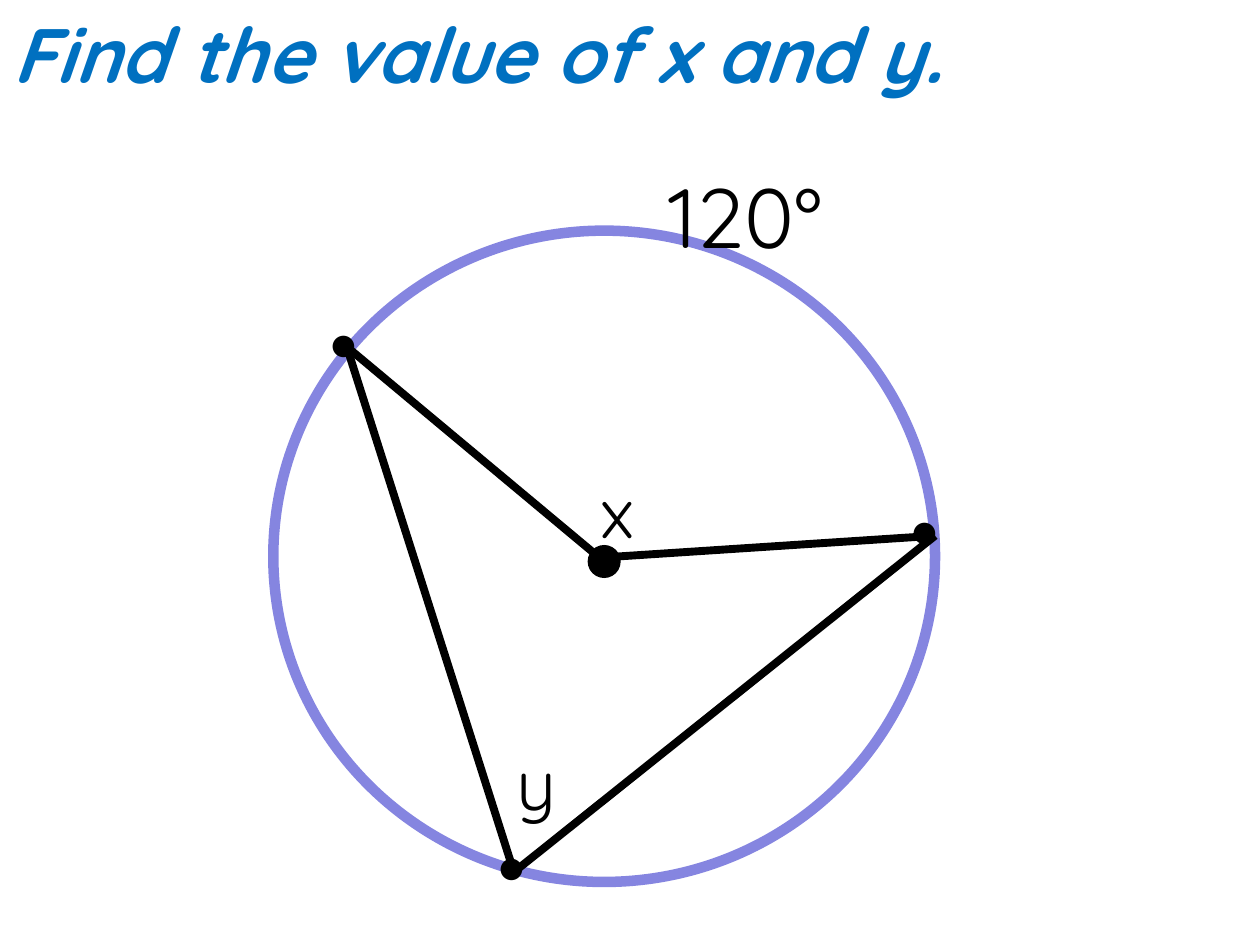
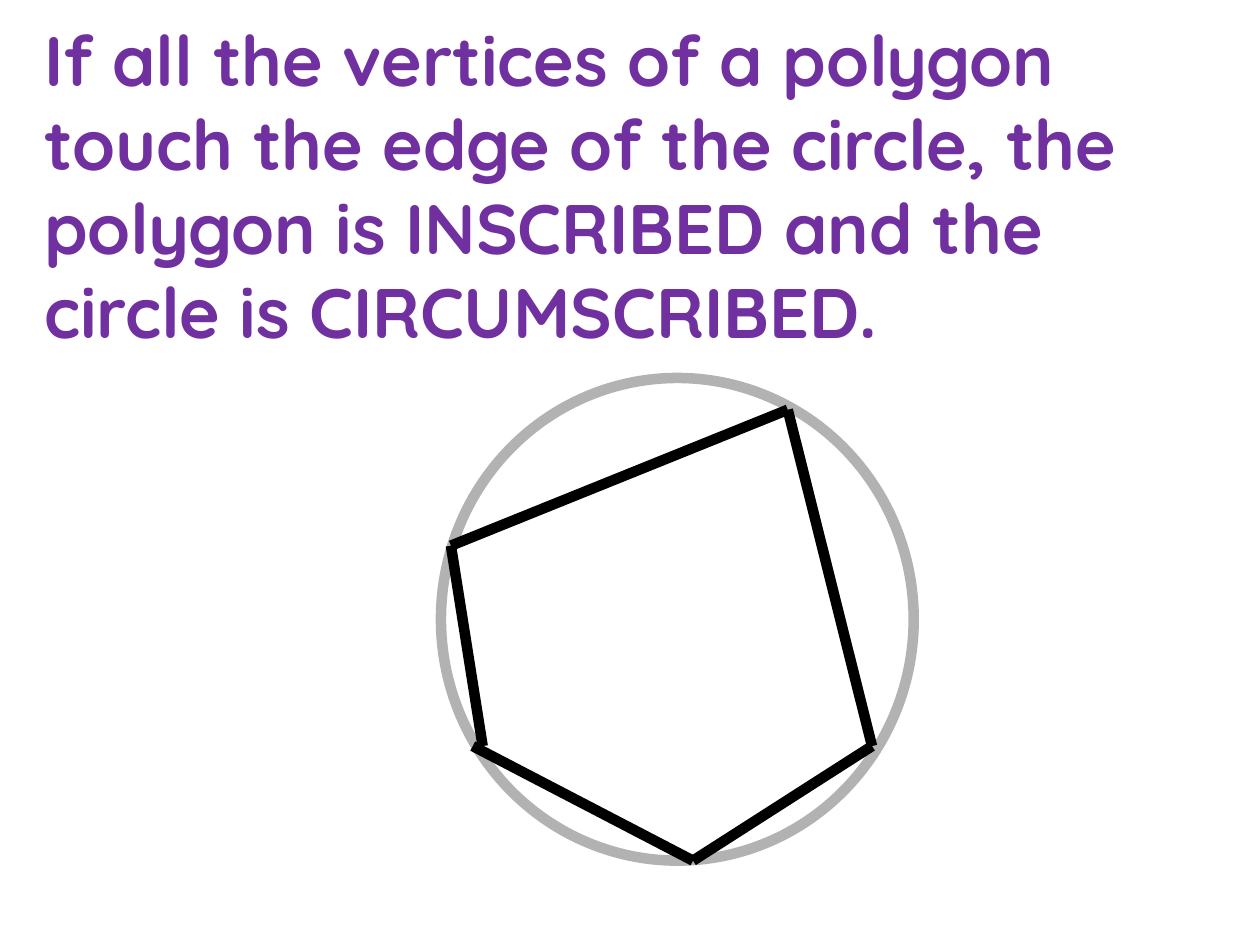
from lxml import etree
from pptx import Presentation
from pptx import util as u
from pptx.dml.color import RGBColor
from pptx.enum import shapes, text
from pptx.oxml.ns import qn

FONT = "Quicksand"
BLACK, WHITE = "000000", "FFFFFF"

# Content: lengths in cm, type and line sizes in points
A, B, C = (6.99, 6.99), (18.85, 10.8), (10.36, 17.58)
LEFT, TOP, RIGHT = (9.09, 11), (15.88, 8.26), (17.58, 15.04)
BASE = (13.97, 17.35)

SLIDES = [
    dict(
        title="Find the value of x and y.",
        box=(0, 0, 21.79, 2.13), size=44, color="0070C0", slant=True,
        rings=[((5.51, 4.65, 13.34, 13.13), None, "8585E0", 6),
               ((11.86, 11, 0.64, 0.64), BLACK, BLACK, 0.75)],
        lines=[((12.27, 11.23), B), ((12.07, 11.23), A), (A, C), (C, B)],
        width=4.5,
        labels=[("120°", (13.23, 3.2, 6.78, 2.31), 48),
                ("x", (11.86, 9.32, 2.97, 1.96), 40),
                ("y", (10.16, 14.81, 2.97, 1.96), 40)]
        + [("•", (x, y, 1.3, 2.31), 48)
           for x, y in [(6.4, 5.77), (18.11, 9.55), (9.78, 16.31)]],
    ),
    dict(
        title="If all the vertices of a polygon touch the edge of the circle, "
              "the polygon is INSCRIBED and the circle is CIRCUMSCRIBED.",
        box=(0.64, 0.2, 23.93, 7.09), size=40, color="7030A0", slant=False,
        rings=[((8.89, 7.62, 9.53, 9.73), WHITE, "B2B2B2", 6)],
        lines=[(LEFT, TOP), (TOP, RIGHT), (LEFT, (9.73, 15.04)),
               ((9.53, 15.04), BASE), (BASE, RIGHT)],
        width=6,
        labels=[],
    ),
]


def rgb(code):
    return RGBColor.from_string(code)


def cm(nums):
    return [u.Cm(n) for n in nums]


def style(frame, words, size, color, bold=False, slant=False):
    frame.text = words
    frame.word_wrap = True
    frame.auto_size = text.MSO_AUTO_SIZE.NONE
    frame.vertical_anchor = text.MSO_ANCHOR.TOP
    para = frame.paragraphs[0]
    para.alignment = text.PP_ALIGN.LEFT
    font = para.runs[0].font
    font.name, font.size = FONT, u.Pt(size)
    font.bold, font.italic = bold, slant
    font.color.rgb = rgb(color)


def stroke(line, color, width):
    line.color.rgb = rgb(color)
    line.width = u.Pt(width)


def ring(slide, box, fill, color, width):
    oval = slide.shapes.add_shape(shapes.MSO_SHAPE.OVAL, *cm(box))
    oval.shadow.inherit = False
    if fill:
        oval.fill.solid()
        oval.fill.fore_color.rgb = rgb(fill)
    else:
        oval.fill.background()
    stroke(oval.line, color, width)


def chord(slide, start, end, width):
    line = slide.shapes.add_connector(
        shapes.MSO_CONNECTOR.STRAIGHT, *cm(start + end))
    stroke(line.line, BLACK, width)
    etree.SubElement(line._element.spPr, qn("a:effectLst"))


def build(deck, item):
    slide = deck.slides.add_slide(deck.slide_layouts[5])

    # Title
    head = slide.shapes.title
    head.left, head.top, head.width, head.height = cm(item["box"])
    style(head.text_frame, item["title"], item["size"], item["color"],
          bold=True, slant=item["slant"])

    # Circles, then the sides, then the labels
    for args in item["rings"]:
        ring(slide, *args)
    for start, end in item["lines"]:
        chord(slide, start, end, item["width"])
    for words, box, size in item["labels"]:
        label = slide.shapes.add_textbox(*cm(box))
        style(label.text_frame, words, size, BLACK)


def main():
    deck = Presentation()
    deck.slide_width, deck.slide_height = cm((25.4, 19.05))
    for item in SLIDES:
        build(deck, item)
    deck.save("out.pptx")


if __name__ == "__main__":
    main()
